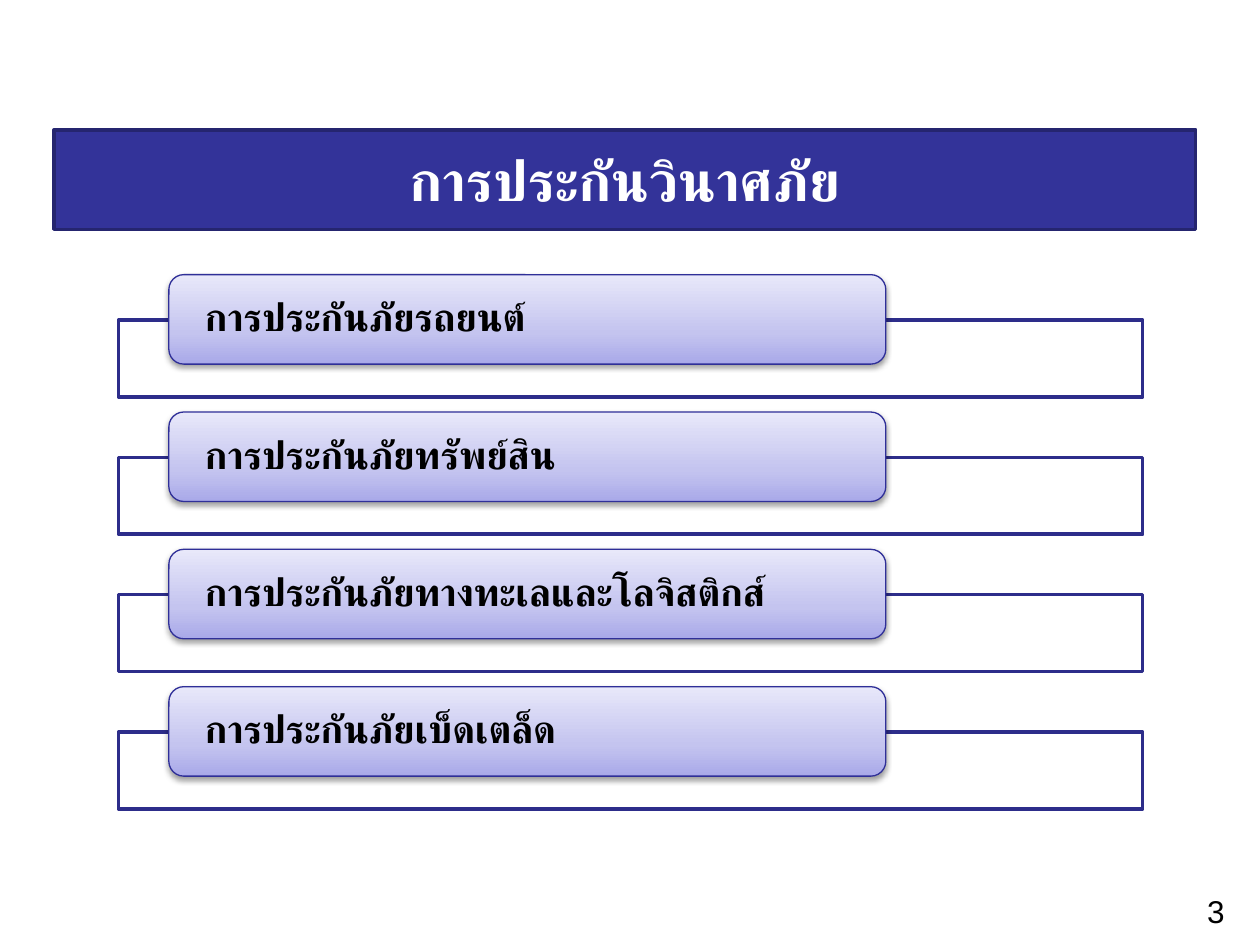
from copy import deepcopy
from dataclasses import dataclass

from lxml import etree
from pptx import Presentation
from pptx import util as u
from pptx.dml.color import RGBColor
from pptx.enum import shapes, text
from pptx.oxml.ns import qn

TOP, PITCH = 2.18, 1.09
DROP = 0.36  # from the top of a label to the top of its frame
STOPS = ((0, "A9A9E9"), (0.35, "C4C4EF"), (1, "E8E8FA"))


@dataclass
class Line:
    """One line of text and its look."""
    words: str
    size: int
    color: str
    align: text.PP_ALIGN
    name: str = "Lato"
    bold: bool = True
    pad: tuple = (0.12, 0.06)


def paint(target, color: str) -> None:
    target.rgb = RGBColor.from_string(color)


def outline(shape, fill: str, line: str, width: float) -> None:
    shape.fill.solid()
    paint(shape.fill.fore_color, fill)
    paint(shape.line.color, line)
    shape.line.width = u.Pt(width)


def write(shape, line: Line, anchor=text.MSO_ANCHOR.MIDDLE) -> None:
    frame = shape.text_frame
    side, end = map(u.Inches, line.pad)
    look = {"word_wrap": True, "vertical_anchor": anchor,
            "margin_left": side, "margin_right": side,
            "margin_top": end, "margin_bottom": end}
    for key, value in look.items():
        setattr(frame, key, value)
    para = frame.paragraphs[0]
    para.alignment = line.align
    run = para.add_run()
    run.text = line.words
    for key, value in {"size": u.Pt(line.size), "bold": line.bold,
                       "name": line.name}.items():
        setattr(run.font, key, value)
    paint(run.font.color, line.color)
    # Thai letters take the complex script font
    etree.SubElement(run.font._element, qn("a:cs"), typeface=line.name)


def block(group, kind, left: float, top: float, width: float, height: float):
    shape = group.shapes.add_shape(kind, *map(u.Inches, (left, top, width, height)))
    shape.shadow.inherit = False
    return shape


def shade(shape) -> None:
    """Three-stop gradient rising from the bottom, with a soft shadow."""
    shape.fill.gradient()
    shape.fill.gradient_angle = 90
    first = shape.fill.gradient_stops[0]._gs
    first.addnext(deepcopy(first))
    for stop, (place, color) in zip(shape.fill.gradient_stops, STOPS):
        stop.position = place
        paint(stop.color, color)
    effects = shape._element.spPr.find(qn("a:effectLst"))
    outer = etree.SubElement(effects, qn("a:outerShdw"), blurRad="40000",
                             dist="20000", dir="5400000", rotWithShape="0")
    black = etree.SubElement(outer, qn("a:srgbClr"), val="000000")
    etree.SubElement(black, qn("a:alpha"), val="38000")


def entry(group, top: float, words: str) -> None:
    frame = block(group, shapes.MSO_SHAPE.RECTANGLE, 0.94, top + DROP, 8.13, 0.61)
    outline(frame, "FFFFFF", "2D2D8A", 2)
    label = block(group, shapes.MSO_SHAPE.ROUNDED_RECTANGLE, 1.34, top, 5.69, 0.71)
    shade(label)
    paint(label.line.color, "2F2F98")
    label.line.width = u.Pt(0.75)
    write(label, Line(words, 22, "000000", text.PP_ALIGN.LEFT, pad=(0.25, 0.04)))
    label.text_frame.paragraphs[0].line_spacing = 0.9


def main() -> None:
    deck = Presentation()
    deck.slide_width, deck.slide_height = u.Inches(10), u.Inches(7.5)
    slide = deck.slides.add_slide(deck.slide_layouts[5])

    # Title band
    title = slide.shapes.title
    for key, value in {"left": 0.43, "top": 1.03, "width": 9.06, "height": 0.79}.items():
        setattr(title, key, u.Inches(value))
    outline(title, "333399", "25256F", 2)
    write(title, Line("การประกันวินาศภัย", 32, "FFFFFF", text.PP_ALIGN.CENTER))

    # Kinds of insurance
    group = slide.shapes.add_group_shape()
    kinds = ("การประกันภัยรถยนต์", "การประกันภัยทรัพย์สิน",
             "การประกันภัยทางทะเลและโลจิสติกส์", "การประกันภัยเบ็ดเตล็ด")
    for i, words in enumerate(kinds):
        entry(group, TOP + i * PITCH, words)

    # Page number
    page = slide.shapes.add_textbox(*map(u.Inches, (7.51, 7.02, 2.33, 0.4)))
    write(page, Line("3", 18, "000000", text.PP_ALIGN.RIGHT, "Arial", False),
          text.MSO_ANCHOR.TOP)

    deck.save("out.pptx")


if __name__ == "__main__":
    main()
